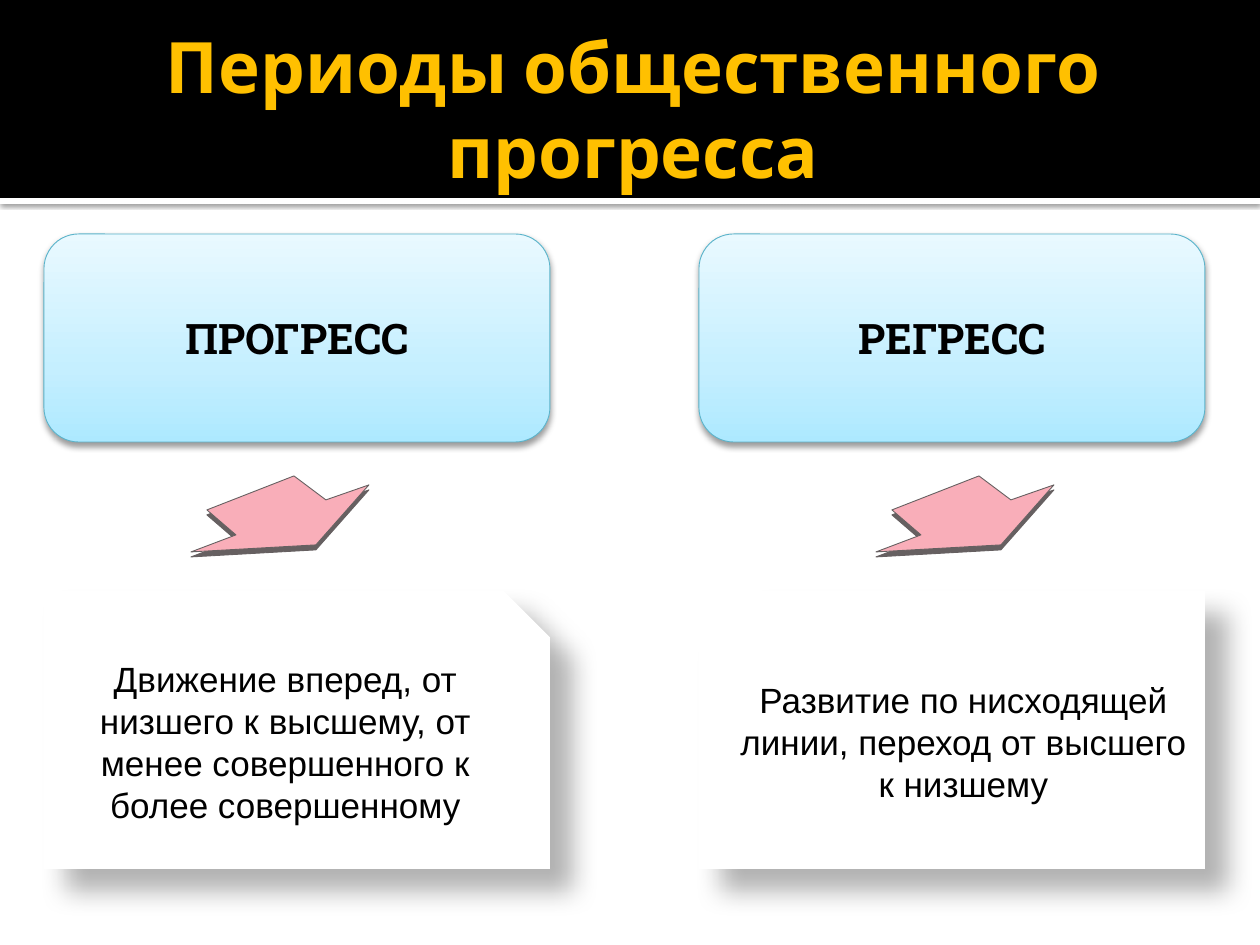
import copy
from dataclasses import dataclass
from typing import Optional

import lxml.etree
import pptx
import pptx.dml.color
import pptx.enum.shapes
import pptx.enum.text
import pptx.oxml.ns
import pptx.util

PX = 914400 // 126  # EMU in one px
SHAPE = pptx.enum.shapes.MSO_SHAPE
MIDDLE = pptx.enum.text.MSO_ANCHOR.MIDDLE
CENTER = pptx.enum.text.PP_ALIGN.CENTER
qn = pptx.oxml.ns.qn

COLORS = {
    "band": "000000", "title": "FFC000", "text": "000000", "paper": "FFFFFF",
    "card_line": "5BB3CA", "arrow": "F0A7B1", "arrow_face": "F9AEB9",
    "arrow_side": "666061", "shadow": "000000",
}
CARD_GRADIENT = [(0, "ADE9FF"), (0.35, "C5EFFF"), (1, "E9F9FF")]
ARROW_OUTLINE = [(16, 34), (103, 0), (135, 24), (178, 9), (125, 69), (0, 76), (45, 59)]
ARROW_DEPTH = 5


@dataclass
class Box:
    x: int
    y: int
    w: int
    h: int


@dataclass
class Shadow:
    alpha: int  # percent
    blur: float  # points
    dist: float  # points
    angle: int  # degrees


@dataclass
class Column:
    x: int
    arrow_x: int
    heading: str
    note: str
    flipped: bool


COLUMNS = [
    Column(44, 191, "ПРОГРЕСС",
           "Движение вперед, от низшего к высшему, от менее совершенного "
           "к более совершенному", False),
    Column(699, 876, "РЕГРЕСС",
           "Развитие по нисходящей линии, переход от высшего к низшему", True),
]


def rgb(name: str):
    return pptx.dml.color.RGBColor.from_string(COLORS[name])


def place(s, box: Box) -> None:
    s.left, s.top, s.width, s.height = (v * PX for v in (box.x, box.y, box.w, box.h))


def add_shadow(s, shadow: Shadow) -> None:
    effects = s._element.spPr.find(qn("a:effectLst"))
    outer = lxml.etree.SubElement(
        effects, qn("a:outerShdw"), blurRad=str(int(shadow.blur * 12700)),
        dist=str(int(shadow.dist * 12700)), dir=str(shadow.angle * 60000),
        algn="tl", rotWithShape="0")
    color = lxml.etree.SubElement(outer, qn("a:srgbClr"), val=COLORS["shadow"])
    lxml.etree.SubElement(color, qn("a:alpha"), val=str(shadow.alpha * 1000))


def add_box(slide, kind, box: Box, fill: str, shadow: Optional[Shadow] = None):
    s = slide.shapes.add_shape(kind, 0, 0, 0, 0)
    place(s, box)
    s.fill.solid()
    s.fill.fore_color.rgb = rgb(fill)
    s.line.fill.background()
    s.shadow.inherit = False
    if shadow:
        add_shadow(s, shadow)
    return s


def set_text(s, text: str, size: float, font: str, color: str, bold: bool) -> None:
    tf = s.text_frame
    tf.text = text
    tf.word_wrap = True
    tf.vertical_anchor = MIDDLE
    p = tf.paragraphs[0]
    p.alignment = CENTER
    r = p.runs[0]
    r.font.size = pptx.util.Pt(size)
    r.font.name = font
    r.font.bold = bold
    r.font.color.rgb = rgb(color)


def set_gradient(s) -> None:
    s.fill.gradient()
    s.fill.gradient_angle = 90
    stops = s._element.spPr.find(".//" + qn("a:gsLst"))
    stops.insert(1, copy.deepcopy(stops[0]))
    for stop, (position, color) in zip(s.fill.gradient_stops, CARD_GRADIENT):
        stop.position = position
        stop.color.rgb = pptx.dml.color.RGBColor.from_string(color)


def add_arrow_layer(slide, x: int, y: int, fill: str) -> None:
    points = [(x + dx, y + dy) for dx, dy in ARROW_OUTLINE]
    builder = slide.shapes.build_freeform(*points[0], scale=PX)
    builder.add_line_segments(points[1:], close=True)
    s = builder.convert_to_shape()
    s.fill.solid()
    s.fill.fore_color.rgb = rgb(fill)
    s.line.color.rgb = rgb("arrow_side")
    s.line.width = pptx.util.Pt(0.5)
    s.shadow.inherit = False


def add_column(slide, col: Column) -> None:
    # Heading card
    card = add_box(slide, SHAPE.ROUNDED_RECTANGLE, Box(col.x, 234, 506, 208),
                   "paper", Shadow(38, 3.5, 2, 90))
    set_gradient(card)
    card.line.color.rgb = rgb("card_line")
    card.line.width = pptx.util.Pt(0.5)
    set_text(card, col.heading, 24, "Roboto Slab", "text", True)

    # Tilted arrow: dark side below, face on top
    add_arrow_layer(slide, col.arrow_x, 476 + ARROW_DEPTH, "arrow_side")
    add_arrow_layer(slide, col.arrow_x, 476, "arrow_face")

    # Note with a snipped corner
    note = add_box(slide, SHAPE.SNIP_1_RECTANGLE, Box(col.x, 591, 506, 278),
                   "paper", Shadow(30, 15, 18, 45))
    if col.flipped:
        note._element.spPr.xfrm.set("flipH", "1")
    set_text(note, col.note, 20, "Arial", "text", False)


def main() -> None:
    prs = pptx.Presentation()
    prs.slide_width, prs.slide_height = pptx.util.Inches(10), pptx.util.Inches(7.5)
    slide = prs.slides.add_slide(prs.slide_layouts[5])

    # Header band with a white rule under it
    add_box(slide, SHAPE.RECTANGLE, Box(0, 198, 1260, 6), "paper",
            Shadow(60, 2.5, 0.8, 90))
    add_box(slide, SHAPE.RECTANGLE, Box(0, 0, 1260, 198), "band")

    # Title, raised above the band
    title = slide.shapes.title
    slide.shapes._spTree.append(title._element)
    place(title, Box(63, 21, 1134, 173))
    set_text(title, "Периоды общественного прогресса", 40.5, "Cabin", "title", True)
    title.text_frame.margin_right = pptx.util.Inches(0.05)

    for col in COLUMNS:
        add_column(slide, col)
    prs.save("out.pptx")


if __name__ == "__main__":
    main()
